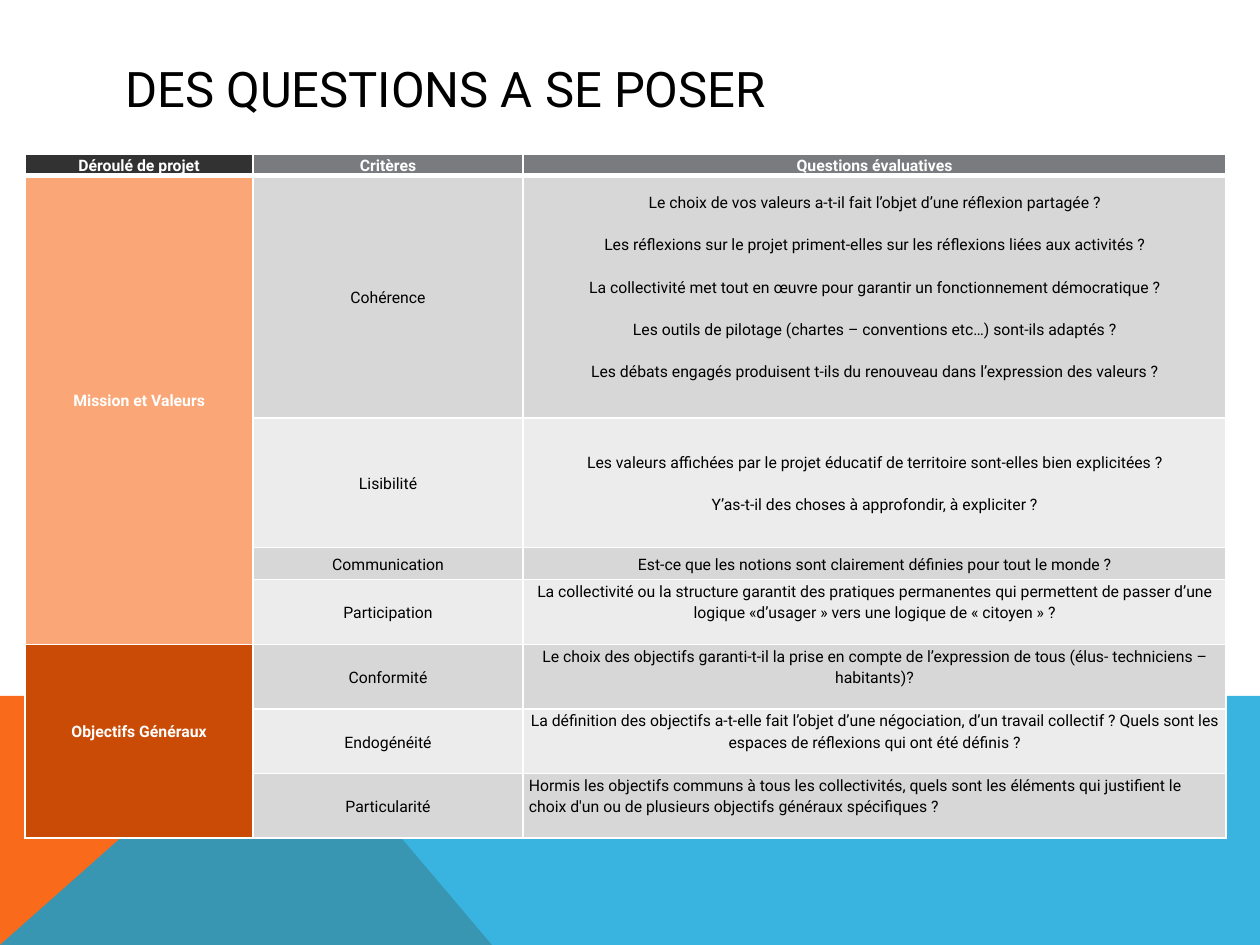
from pptx import Presentation, util as u
from pptx.dml.color import RGBColor
from pptx.enum import text
from pptx.oxml.xmlchemy import OxmlElement

EMU_PER_PX = 914400 / 126
BLANK_LINE = 21

# criterion, row height, space under the questions, alignment, questions
STAGES = [
    ("Mission et Valeurs", "FBA676", [
        ("Cohérence", 242, BLANK_LINE, "CENTER", [
            "Le choix de vos valeurs a-t-il fait l’objet d’une réflexion partagée ?",
            "Les réflexions sur le projet priment-elles sur les réflexions liées aux activités ?",
            "La collectivité met tout en œuvre pour garantir un fonctionnement démocratique ?",
            "Les outils de pilotage (chartes – conventions etc…) sont-ils adaptés ?",
            "Les débats engagés produisent t-ils du renouveau dans l’expression des valeurs ?",
        ]),
        ("Lisibilité", 130, 0, "CENTER", [
            "Les valeurs affichées par le projet éducatif de territoire sont-elles bien explicitées ?",
            "Y’as-t-il des choses à approfondir, à expliciter ?",
        ]),
        ("Communication", 32, 0, "CENTER", [
            "Est-ce que les notions sont clairement définies pour tout le monde ?",
        ]),
        ("Participation", 64, BLANK_LINE, "CENTER", [
            "La collectivité ou la structure garantit des pratiques permanentes qui permettent "
            "de passer d’une logique «d’usager » vers une logique de « citoyen » ?",
        ]),
    ]),
    ("Objectifs Généraux", "CA4B05", [
        ("Conformité", 64, BLANK_LINE, "CENTER", [
            "Le choix des objectifs garanti-t-il la prise en compte de l’expression de tous "
            "(élus- techniciens –habitants)?",
        ]),
        ("Endogénéité", 64, BLANK_LINE, "CENTER", [
            "La définition des objectifs a-t-elle fait l’objet d’une négociation, d’un travail "
            "collectif ? Quels sont les espaces de réflexions qui ont été définis ?",
        ]),
        ("Particularité", 64, BLANK_LINE, "LEFT", [
            "Hormis les objectifs communs à tous les collectivités, quels sont les éléments qui "
            "justifient le choix d'un ou de plusieurs objectifs généraux spécifiques ?",
        ]),
    ]),
]
HEADERS = [("Déroulé de projet", "323232"), ("Critères", "797B7E"),
           ("Questions évaluatives", "797B7E")]
BANDS = ["D7D7D8", "ECECEC"]


def px(length):
    return u.Emu(round(length * EMU_PER_PX))


def color(value):
    return RGBColor.from_string(value)


class SlideBuilder:
    """Holds the style and the slide being drawn."""

    font = "Roboto"
    ink = "000000"
    paper = "FFFFFF"

    def __init__(self, slide):
        self.slide = slide

    def style_runs(self, paragraph, size, ink, bold=False):
        for run in paragraph.runs:
            run.font.name = self.font
            run.font.size = u.Pt(size)
            run.font.bold = bold
            run.font.color.rgb = color(ink)

    def polygon(self, points, fill, opacity=100):
        outline = self.slide.shapes.build_freeform(*points[0], scale=EMU_PER_PX)
        outline.add_line_segments(points[1:], close=True)
        shape = outline.convert_to_shape()
        shape.shadow.inherit = False
        shape.line.fill.background()
        shape.fill.solid()
        shape.fill.fore_color.rgb = color(fill)
        if opacity < 100:
            alpha = OxmlElement("a:alpha")
            alpha.set("val", str(opacity * 1000))
            shape.fill._xPr.find(".//{*}srgbClr").append(alpha)

    def title(self, words, left, top, width, height):
        frame = self.slide.shapes.add_textbox(
            px(left), px(top), px(width), px(height)).text_frame
        frame.word_wrap = True
        frame.vertical_anchor = text.MSO_ANCHOR.MIDDLE
        frame.text = words
        self.style_runs(frame.paragraphs[0], 28, self.ink)

    def table(self, left, top, widths, heights):
        table = self.slide.shapes.add_table(
            len(heights), len(widths), px(left), px(top),
            px(sum(widths)), px(sum(heights))).table
        table.first_row = table.horz_banding = False
        for column, width in zip(table.columns, widths):
            column.width = px(width)
        for row, height in zip(table.rows, heights):
            row.height = px(height)
        for i, row in enumerate(table.rows):
            for cell in row.cells:
                self.borders(cell, top=3 if i == 1 else 1, bottom=3 if i == 0 else 1)
        return table

    def borders(self, cell, top, bottom):
        properties = cell._tc.get_or_add_tcPr()
        for side, points in (("L", 1), ("R", 1), ("T", top), ("B", bottom)):
            line = OxmlElement(f"a:ln{side}")
            line.set("w", str(u.Pt(points)))
            fill = OxmlElement("a:solidFill")
            rgb = OxmlElement("a:srgbClr")
            rgb.set("val", self.paper)
            fill.append(rgb)
            line.append(fill)
            properties.append(line)

    def cell(self, cell, lines, fill, ink=ink, bold=False, align="CENTER", below=0):
        cell.fill.solid()
        cell.fill.fore_color.rgb = color(fill)
        cell.margin_left = cell.margin_right = px(6)
        cell.margin_top, cell.margin_bottom = 0, px(below)
        cell.vertical_anchor = text.MSO_ANCHOR.MIDDLE
        cell.text_frame.text = "\n".join(lines)
        for i, paragraph in enumerate(cell.text_frame.paragraphs):
            paragraph.alignment = text.PP_ALIGN[align]
            paragraph.line_spacing = 1.15
            paragraph.space_before = px(BLANK_LINE if i else 0)
            self.style_runs(paragraph, 9, ink, bold)


def main():
    deck = Presentation()
    deck.slide_width, deck.slide_height = px(1260), px(945)
    builder = SlideBuilder(deck.slides.add_slide(deck.slide_layouts[6]))

    builder.polygon([(0, 945), (0, 696), (281, 696), (492, 945)], "F96A1B")
    builder.polygon([(0, 945), (281, 696), (1260, 696), (1260, 945)], "08A1D9", 80)
    builder.title("DES QUESTIONS A SE POSER", 113, 50, 1036, 76)

    heights = [21] + [entry[1] for stage in STAGES for entry in stage[2]]
    table = builder.table(25, 154, [228, 270, 703], heights)
    for column, (header, fill) in enumerate(HEADERS):
        builder.cell(table.cell(0, column), [header], fill, builder.paper, bold=True)

    row = 1
    for stage, stage_fill, criteria in STAGES:
        stage_cell = table.cell(row, 0)
        stage_cell.merge(table.cell(row + len(criteria) - 1, 0))
        builder.cell(stage_cell, [stage], stage_fill, builder.paper, bold=True,
                     below=BLANK_LINE)
        for criterion, _, below, align, questions in criteria:
            band = BANDS[(row - 1) % 2]
            builder.cell(table.cell(row, 1), [criterion], band)
            builder.cell(table.cell(row, 2), questions, band, align=align, below=below)
            row += 1

    deck.save("out.pptx")


if __name__ == "__main__":
    main()
